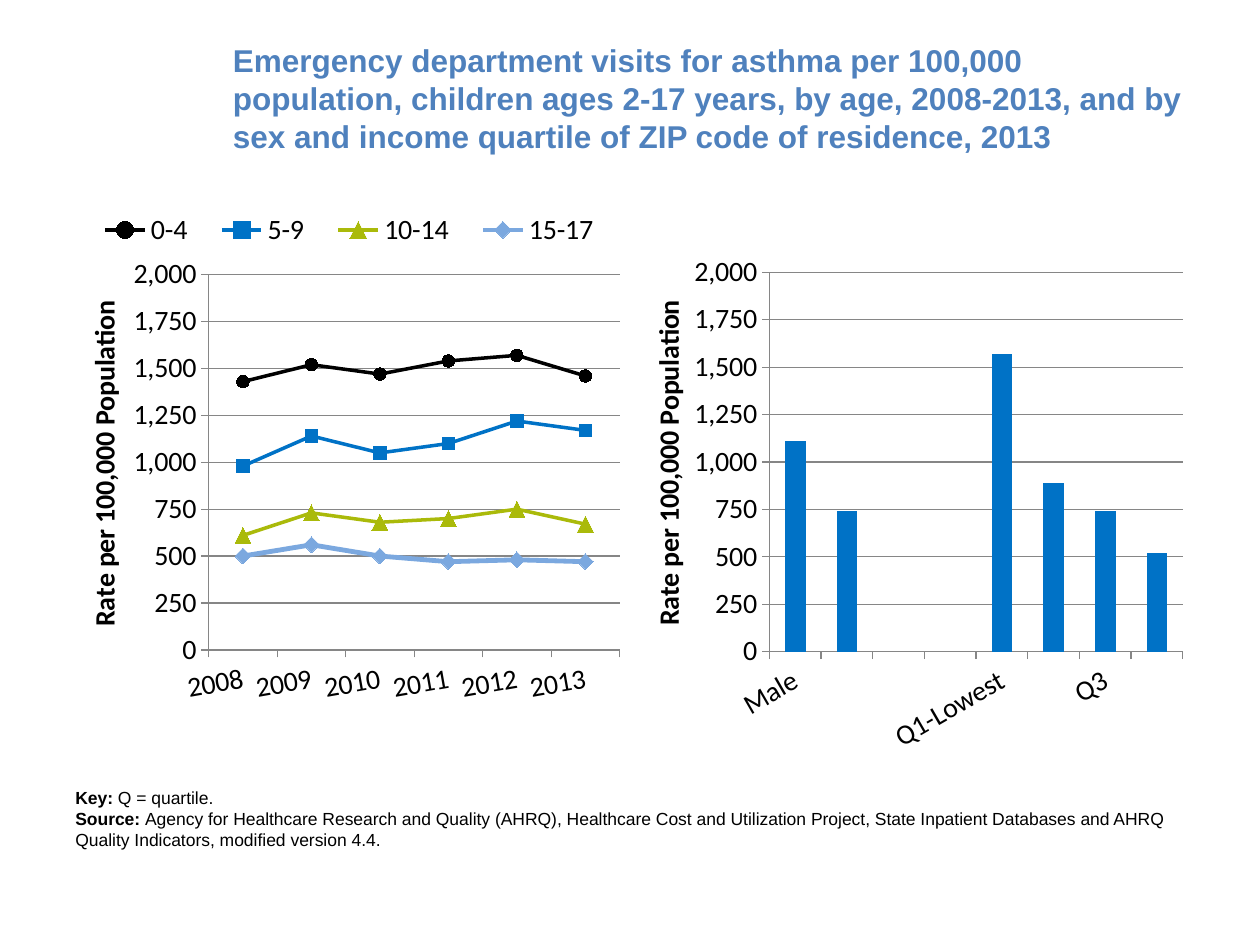
from pptx import Presentation
from pptx.chart.data import CategoryChartData
from pptx.dml.color import RGBColor
from pptx.enum.chart import XL_CHART_TYPE as ChartType
from pptx.enum.chart import XL_LEGEND_POSITION as LegendPosition
from pptx.enum.chart import XL_MARKER_STYLE as Marker
from pptx.enum.chart import XL_TICK_MARK as TickMark
from pptx.enum.text import MSO_ANCHOR as Anchor
from pptx.oxml import parse_xml
from pptx.oxml.ns import nsdecls, qn
from pptx.util import Pt

BLACK = RGBColor(0x00, 0x00, 0x00)
TITLE_BLUE = RGBColor(0x4F, 0x81, 0xBD)
BLUE = RGBColor(0x00, 0x72, 0xC6)
GREEN = RGBColor(0xAA, 0xBA, 0x0A)
LIGHT_BLUE = RGBColor(0x7B, 0xA8, 0xDF)
GRAY = RGBColor(0x86, 0x86, 0x86)

TITLE = ("Emergency department visits for asthma per 100,000 population, "
         "children ages 2-17 years, by age, 2008-2013, and by sex and income "
         "quartile of ZIP code of residence, 2013")
NOTES = [
    ("Key: ", "Q = quartile."),
    ("Source: ", "Agency for Healthcare Research and Quality (AHRQ), Healthcare "
     "Cost and Utilization Project, State Inpatient Databases and AHRQ Quality "
     "Indicators, modified version 4.4."),
]

YEARS = ["2008", "2009", "2010", "2011", "2012", "2013"]
# name, values, colour, line width, marker style, marker size
AGE_GROUPS = [
    ("0-4", (1430, 1520, 1470, 1540, 1570, 1460), BLACK, 2, Marker.CIRCLE, 7),
    ("5-9", (980, 1140, 1050, 1100, 1220, 1170), BLUE, 2, Marker.SQUARE, 7),
    ("10-14", (610, 730, 680, 700, 750, 670), GREEN, 2, Marker.TRIANGLE, 9),
    ("15-17", (500, 560, 500, 470, 480, 470), LIGHT_BLUE, 2.75, Marker.DIAMOND, 9),
]
GROUPS = ["Male", "Female ", "", "", "Q1-Lowest", "Q2", "Q3", "Q4-Highest"]
GROUP_RATES = (1110, 740, None, None, 1570, 890, 740, 520)


def set_font(font, name, size, color=BLACK, bold=None):
    font.name = name
    font.size = Pt(size)
    font.color.rgb = color
    font.bold = bold


def add_text_box(slide, left, top, width, height):
    frame = slide.shapes.add_textbox(Pt(left), Pt(top), Pt(width), Pt(height)).text_frame
    frame.word_wrap = True
    return frame


def add_title(slide):
    frame = add_text_box(slide, 126, 21.6, 558, 68.4)
    frame.vertical_anchor = Anchor.MIDDLE
    frame.text = TITLE
    set_font(frame.paragraphs[0].font, "Arial", 18, TITLE_BLUE, True)


def add_notes(slide):
    frame = add_text_box(slide, 36, 446.4, 648, 44)
    for index, (label, text) in enumerate(NOTES):
        paragraph = frame.add_paragraph() if index else frame.paragraphs[0]
        set_font(paragraph.font, "Arial", 10)
        label_run = paragraph.add_run()
        label_run.text = label
        label_run.font.bold = True
        paragraph.add_run().text = text


def set_layout(element, index, x, y, width=None, height=None, inner=False):
    """Place a chart part by fractions of the chart's size."""
    for old_layout in element.findall(qn("c:layout")):
        element.remove(old_layout)
    settings = [("layoutTarget", "inner")] if inner else []
    settings += [("xMode", "edge"), ("yMode", "edge"), ("x", x), ("y", y)]
    if width:
        settings += [("w", width), ("h", height)]
    content = "".join(f'<c:{tag} val="{value}"/>' for tag, value in settings)
    element.insert(index, parse_xml(
        f'<c:layout {nsdecls("c")}><c:manualLayout>{content}</c:manualLayout></c:layout>'))


def set_rotation(element, degrees):
    element.find(".//" + qn("a:bodyPr")).set("rot", str(degrees * 60000))


def format_axis(axis):
    axis.major_tick_mark = TickMark.OUTSIDE
    axis.minor_tick_mark = TickMark.NONE
    axis.format.line.color.rgb = GRAY
    axis.format.line.width = Pt(0.75)
    set_font(axis.tick_labels.font, "Calibri", 16)


def add_rate_chart(slide, kind, left, categories, series, plot, title_at, label_angle):
    data = CategoryChartData(number_format="General")
    data.categories = categories
    for name, values in series:
        data.add_series(name, values)
    chart = slide.shapes.add_chart(
        kind, Pt(left), Pt(115.2), Pt(324), Pt(324), data).chart
    set_font(chart.font, "Arial", 10)
    chart.has_title = False
    chart.has_legend = False
    chart.plots[0].vary_by_categories = False
    set_layout(chart.element.find(".//" + qn("c:plotArea")), 0, *plot, inner=True)

    format_axis(chart.category_axis)
    set_rotation(chart.category_axis.tick_labels.font and
                 chart.element.find(".//" + qn("c:catAx")), label_angle)

    axis = chart.value_axis
    format_axis(axis)
    axis.minimum_scale, axis.maximum_scale, axis.major_unit = 0, 2000, 250
    axis.tick_labels.number_format = "#,##0"
    axis.tick_labels.number_format_is_linked = False
    axis.major_gridlines.format.line.color.rgb = GRAY
    axis.major_gridlines.format.line.width = Pt(0.75)
    frame = axis.axis_title.text_frame
    frame.text = "Rate per 100,000 Population"
    set_font(frame.paragraphs[0].font, "Calibri", 16, bold=True)
    title = chart.element.find(".//" + qn("c:valAx")).find(qn("c:title"))
    set_rotation(title, -90)
    set_layout(title, 1, *title_at)
    return chart


def add_age_chart(slide):
    chart = add_rate_chart(
        slide, ChartType.LINE_MARKERS, 36, YEARS, [group[:2] for group in AGE_GROUPS],
        (0.257, 0.129, 0.725, 0.662), (0.03, 0.166), -10)
    for series, group in zip(chart.plots[0].series, AGE_GROUPS):
        color, width, style, size = group[2:]
        series.smooth = False
        series.format.line.color.rgb = color
        series.format.line.width = Pt(width)
        series.marker.style = style
        series.marker.size = size
        series.marker.format.fill.solid()
        series.marker.format.fill.fore_color.rgb = color
        series.marker.format.line.color.rgb = color
    chart.has_legend = True
    legend = chart.legend
    legend.position = LegendPosition.TOP
    legend.include_in_layout = False
    set_font(legend.font, "Calibri", 16)
    set_layout(chart.element.find(".//" + qn("c:legend")), 1, 0.03, 0.01, 0.95, 0.08)


def add_group_chart(slide):
    chart = add_rate_chart(
        slide, ChartType.COLUMN_CLUSTERED, 360, GROUPS, [("Series 1", GROUP_RATES)],
        (0.246, 0.125, 0.729, 0.669), (0.025, 0.165), -30)
    plot = chart.plots[0]
    plot.gap_width = 150
    fill = plot.series[0].format.fill
    fill.solid()
    fill.fore_color.rgb = BLUE


def main():
    presentation = Presentation()
    presentation.slide_width, presentation.slide_height = Pt(720), Pt(540)
    slide = presentation.slides.add_slide(presentation.slide_layouts[6])
    add_title(slide)
    add_age_chart(slide)
    add_group_chart(slide)
    add_notes(slide)
    presentation.save("out.pptx")


if __name__ == "__main__":
    main()
